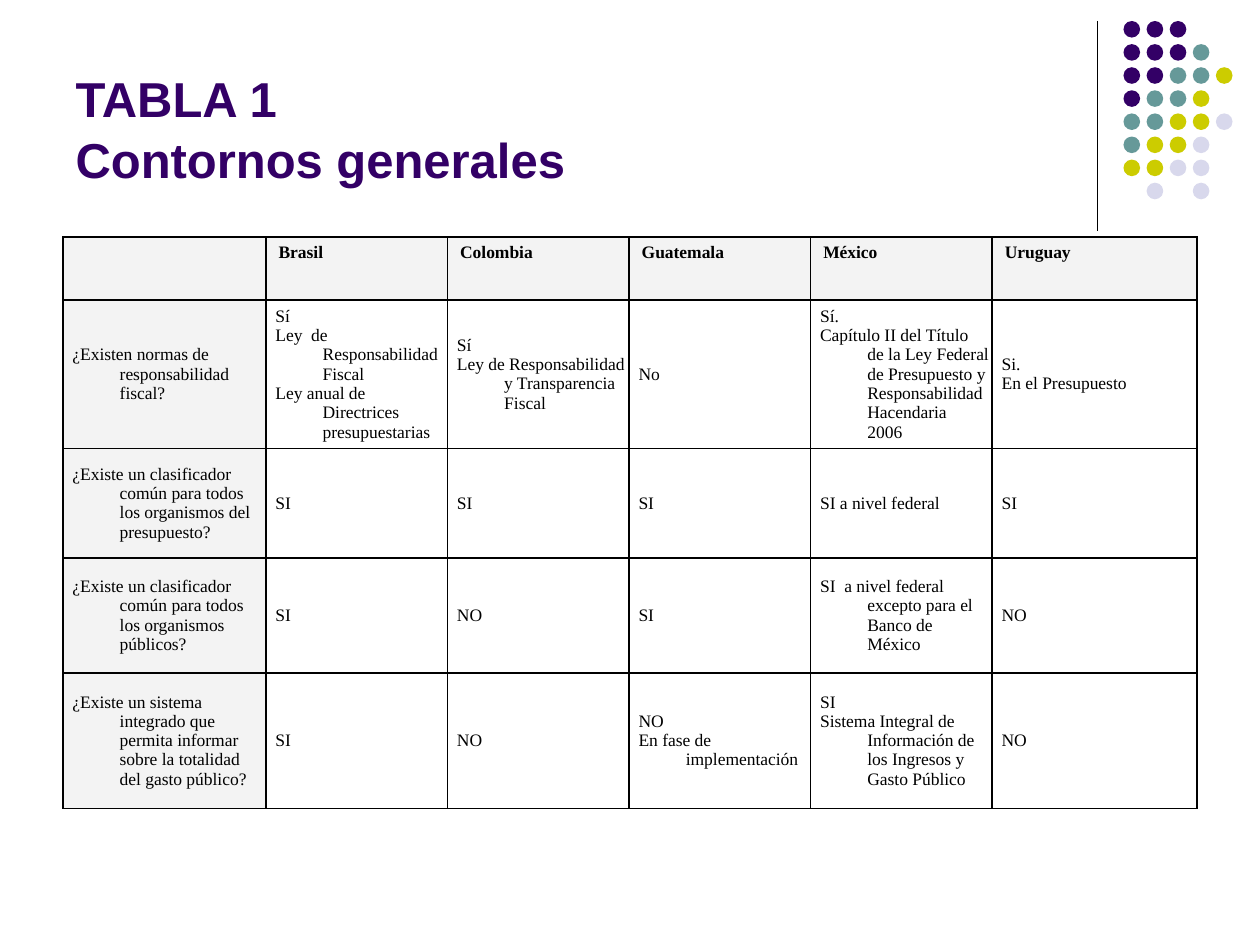
from lxml import etree
from pptx import Presentation
from pptx.dml.color import RGBColor
from pptx.enum import shapes, text
from pptx.oxml import ns
from pptx.util import Pt

PURPLE = RGBColor(0x33, 0x00, 0x66)
TEAL = RGBColor(0x66, 0x99, 0x99)
LIME = RGBColor(0xCC, 0xCC, 0x00)
LILAC = RGBColor(0xD8, 0xD8, 0xEC)
GREY = RGBColor(0xF3, 0xF3, 0xF3)
WHITE = RGBColor(0xFF, 0xFF, 0xFF)
BLACK = RGBColor(0, 0, 0)

# Content: each cell holds one paragraph per line
TITLE = "TABLA 1\vContornos generales"
ROWS = [
    ["", "Brasil", "Colombia", "Guatemala", "México", "Uruguay"],
    ["¿Existen normas de responsabilidad fiscal?",
     "Sí\nLey  de Responsabilidad Fiscal\nLey anual de Directrices  presupuestarias",
     "Sí\nLey de Responsabilidad y Transparencia Fiscal",
     "No",
     "Sí.\nCapítulo II del Título  de la Ley Federal de Presupuesto y "
     "Responsabilidad Hacendaria  2006",
     "Si.\nEn el Presupuesto"],
    ["¿Existe un clasificador común para todos los organismos del presupuesto?",
     "SI", "SI", "SI", "SI a nivel federal", "SI"],
    ["¿Existe un clasificador común para todos los organismos públicos?",
     "SI", "NO", "SI", "SI  a nivel federal excepto para el Banco de México", "NO"],
    ["¿Existe un sistema integrado que permita informar sobre la totalidad "
     "del gasto público?",
     "SI", "NO", "NO\nEn fase de implementación",
     "SI\nSistema Integral de Información de los Ingresos y Gasto Público", "NO"],
]
COLUMN_WIDTHS = [116, 103.75, 103.75, 103.75, 103.75, 117]
ROW_HEIGHTS = [36, 84.7, 62.8, 65.6, 77.4]

# Dot ornament: one letter per dot, a space for a gap
DOT_COLOURS = {"P": PURPLE, "T": TEAL, "L": LIME, "V": LILAC}
DOT_ROWS = ["PPP", "PPPT", "PPTTL", "PTTL", "TTLLV", "TLLV", "LLVV", " V V"]
DOT_LEFT, DOT_TOP, DOT_PITCH, DOT_SIZE = 642, 12, 13.2, 9.5


def add_borders(cell):
    tc_pr = cell._tc.get_or_add_tcPr()
    for side in ("lnL", "lnR", "lnT", "lnB"):
        line = etree.SubElement(tc_pr, ns.qn(f"a:{side}"), w=str(Pt(1)))
        fill = etree.SubElement(line, ns.qn("a:solidFill"))
        etree.SubElement(fill, ns.qn("a:srgbClr"), val=str(BLACK))


def fill_cell(cell, wording, is_header, is_label):
    add_borders(cell)
    cell.fill.solid()
    cell.fill.fore_color.rgb = GREY if is_header or is_label else WHITE
    if not is_header:
        cell.vertical_anchor = text.MSO_ANCHOR.MIDDLE
        cell.margin_left, cell.margin_right = Pt(5.4), Pt(1.4)
    cell.text = wording
    for paragraph in cell.text_frame.paragraphs:
        p_pr = paragraph._p.get_or_add_pPr()
        p_pr.set("marL", str(Pt(27)))
        p_pr.set("indent", str(Pt(-27)))
        font = paragraph.font
        font.name, font.size, font.bold = "Times New Roman", Pt(10), is_header
        font.color.rgb = BLACK


prs = Presentation()
prs.slide_width, prs.slide_height = Pt(720), Pt(540)
slide = prs.slides.add_slide(prs.slide_layouts[5])

# Vertical rule
rule = slide.shapes.add_connector(
    shapes.MSO_CONNECTOR.STRAIGHT, Pt(627), Pt(12), Pt(627), Pt(132))
rule.line.color.rgb = BLACK
rule.line.width = Pt(0.75)
etree.SubElement(rule._element.spPr, ns.qn("a:effectLst"))

# Dots
dots = slide.shapes.add_group_shape()
for row, letters in enumerate(DOT_ROWS):
    for column, letter in enumerate(letters):
        if letter == " ":
            continue
        dot = dots.shapes.add_shape(
            shapes.MSO_SHAPE.OVAL,
            Pt(DOT_LEFT + column * DOT_PITCH), Pt(DOT_TOP + row * DOT_PITCH),
            Pt(DOT_SIZE), Pt(DOT_SIZE))
        dot.shadow.inherit = False
        dot.fill.solid()
        dot.fill.fore_color.rgb = DOT_COLOURS[letter]
        dot.line.fill.background()

# Title
title = slide.shapes.title
title.left, title.top, title.width, title.height = Pt(36), Pt(9.5), Pt(594), Pt(102)
title.text_frame.text = TITLE
title.text_frame.vertical_anchor = text.MSO_ANCHOR.BOTTOM
heading = title.text_frame.paragraphs[0]
heading.alignment = text.PP_ALIGN.LEFT
heading.line_spacing = 1.05
heading.font.name, heading.font.size, heading.font.bold = "Arial", Pt(28), True
heading.font.color.rgb = PURPLE

# Comparison table
comparison = slide.shapes.add_table(
    len(ROWS), len(ROWS[0]), Pt(36), Pt(135.5),
    Pt(sum(COLUMN_WIDTHS)), Pt(sum(ROW_HEIGHTS))).table
for column, width in zip(comparison.columns, COLUMN_WIDTHS):
    column.width = Pt(width)
for row, height in zip(comparison.rows, ROW_HEIGHTS):
    row.height = Pt(height)
for r, wordings in enumerate(ROWS):
    for c, wording in enumerate(wordings):
        fill_cell(comparison.cell(r, c), wording, r == 0, c == 0)

prs.save("out.pptx")
